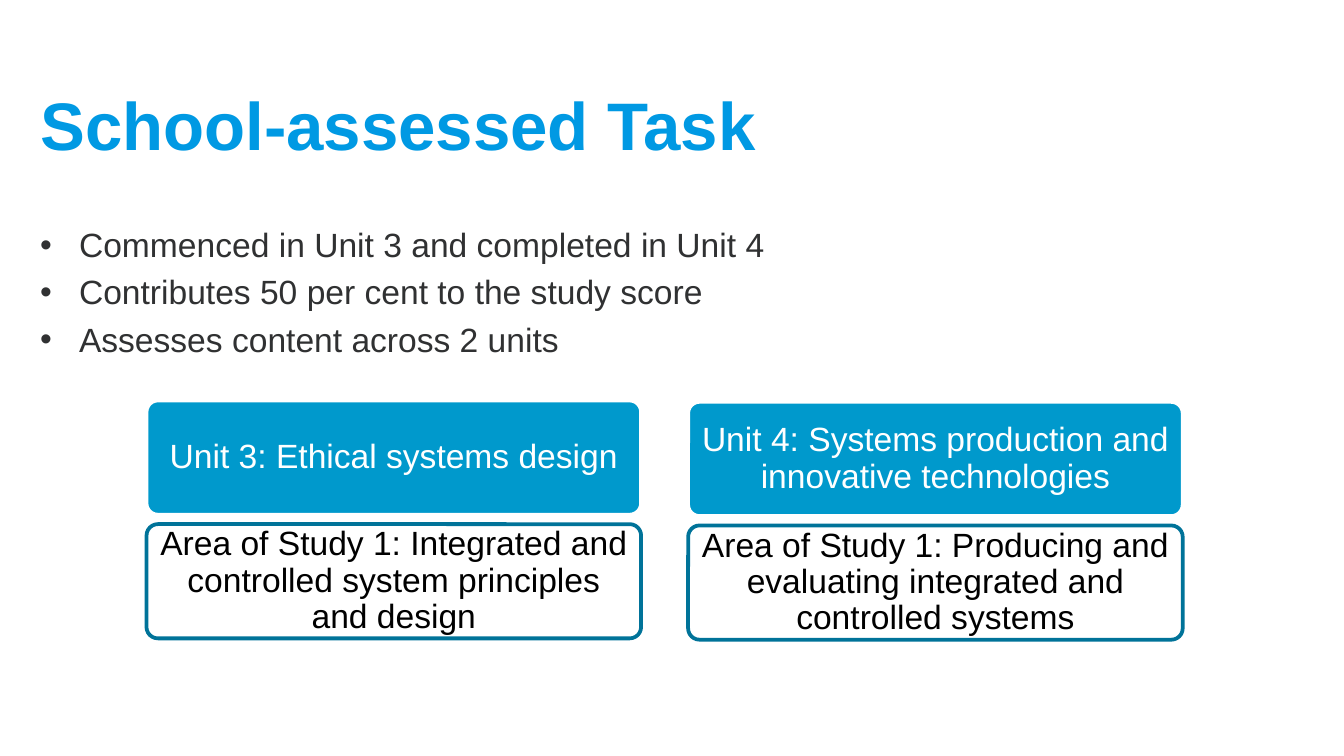
"""Build the School-assessed Task slide."""
import pptx
import pptx.dml.color
import pptx.enum.shapes
import pptx.enum.text
import pptx.oxml
import pptx.oxml.ns
import pptx.util

Inches = pptx.util.Inches
Pt = pptx.util.Pt
RGBColor = pptx.dml.color.RGBColor
ANCHOR = pptx.enum.text.MSO_ANCHOR
ALIGN = pptx.enum.text.PP_ALIGN

SKY = RGBColor(0x00, 0x99, 0xE3)
CHARCOAL = RGBColor(0x30, 0x31, 0x32)
BLUE = RGBColor(0x00, 0x99, 0xCC)
TEAL = RGBColor(0x00, 0x73, 0x99)
WHITE = RGBColor(0xFF, 0xFF, 0xFF)
BLACK = RGBColor(0x00, 0x00, 0x00)

TITLE = "School-assessed Task"
BULLETS = [
    "Commenced in Unit 3 and completed in Unit 4",
    "Contributes 50 per cent to the study score",
    "Assesses content across 2 units",
]
UNITS = [
    ("Unit 3: Ethical systems design",
     "Area of Study 1: Integrated and controlled system principles and design"),
    ("Unit 4: Systems production and innovative technologies",
     "Area of Study 1: Producing and evaluating integrated and controlled systems"),
]
CARD_STYLES = [
    {"fill": BLUE, "line": WHITE, "color": WHITE},
    {"fill": WHITE, "line": TEAL, "color": BLACK},
]
LEFT, TOP = 1.09, 2.98
CARD_WIDTH, CARD_HEIGHT = 3.68, 0.85
COLUMN_STEP, ROW_STEP, COLUMN_DROP = 4.03, 0.92, 0.01


def write(paragraph, text, *, size=18, color=BLACK, bold=False,
          align=ALIGN.LEFT, spacing=1.0, bullet=False):
    if bullet:
        properties = paragraph._p.get_or_add_pPr()
        properties.set("marL", str(Inches(0.29)))
        properties.set("indent", str(-Inches(0.29)))
        namespace = pptx.oxml.ns.nsdecls("a")
        for mark in ('buFont typeface="Arial"', 'buChar char="•"'):
            properties.append(pptx.oxml.parse_xml(f"<a:{mark} {namespace}/>"))
    paragraph.alignment = align
    paragraph.line_spacing = spacing
    span = paragraph.add_run()
    span.text = text
    span.font.name = "Arial"
    span.font.size = Pt(size)
    span.font.bold = bold
    span.font.color.rgb = color


def add_title(page):
    title = page.shapes.title
    title.left, title.top = Inches(0.2), Inches(0.45)
    title.width, title.height = Inches(9.53), Inches(0.94)
    title.text_frame.vertical_anchor = ANCHOR.MIDDLE
    write(title.text_frame.paragraphs[0], TITLE, size=36, color=SKY, bold=True)


def add_bullets(page):
    box = page.shapes.add_textbox(
        Inches(0.2), Inches(1.62), Inches(9.53), Inches(3.25))
    frame = box.text_frame
    frame.word_wrap = True
    for index, text in enumerate(BULLETS):
        para = frame.add_paragraph() if index else frame.paragraphs[0]
        write(para, text, color=CHARCOAL, bullet=True)
        if index:
            para.space_before = Pt(3.6)


def add_card(page, text, left, top, *, fill, line, color):
    card = page.shapes.add_shape(
        pptx.enum.shapes.MSO_SHAPE.ROUNDED_RECTANGLE,
        Inches(left), Inches(top), Inches(CARD_WIDTH), Inches(CARD_HEIGHT))
    card.adjustments[0] = 0.1
    card.shadow.inherit = False
    card.fill.solid()
    card.fill.fore_color.rgb = fill
    card.line.color.rgb = line
    card.line.width = Pt(2)
    frame = card.text_frame
    frame.word_wrap = True
    frame.vertical_anchor = ANCHOR.MIDDLE
    frame.margin_left = frame.margin_right = Inches(0.06)
    frame.margin_top = frame.margin_bottom = Inches(0.06)
    write(frame.paragraphs[0], text, color=color, align=ALIGN.CENTER, spacing=0.9)


def main():
    deck = pptx.Presentation()
    deck.slide_width = Inches(10)
    deck.slide_height = deck.slide_width * 9 // 16
    page = deck.slides.add_slide(deck.slide_layouts[5])
    add_title(page)
    add_bullets(page)
    for column, texts in enumerate(UNITS):
        for row, (text, style) in enumerate(zip(texts, CARD_STYLES)):
            left = LEFT + column * COLUMN_STEP
            top = TOP + row * ROW_STEP + column * COLUMN_DROP
            add_card(page, text, left, top, **style)
    deck.save("out.pptx")


if __name__ == "__main__":
    main()
